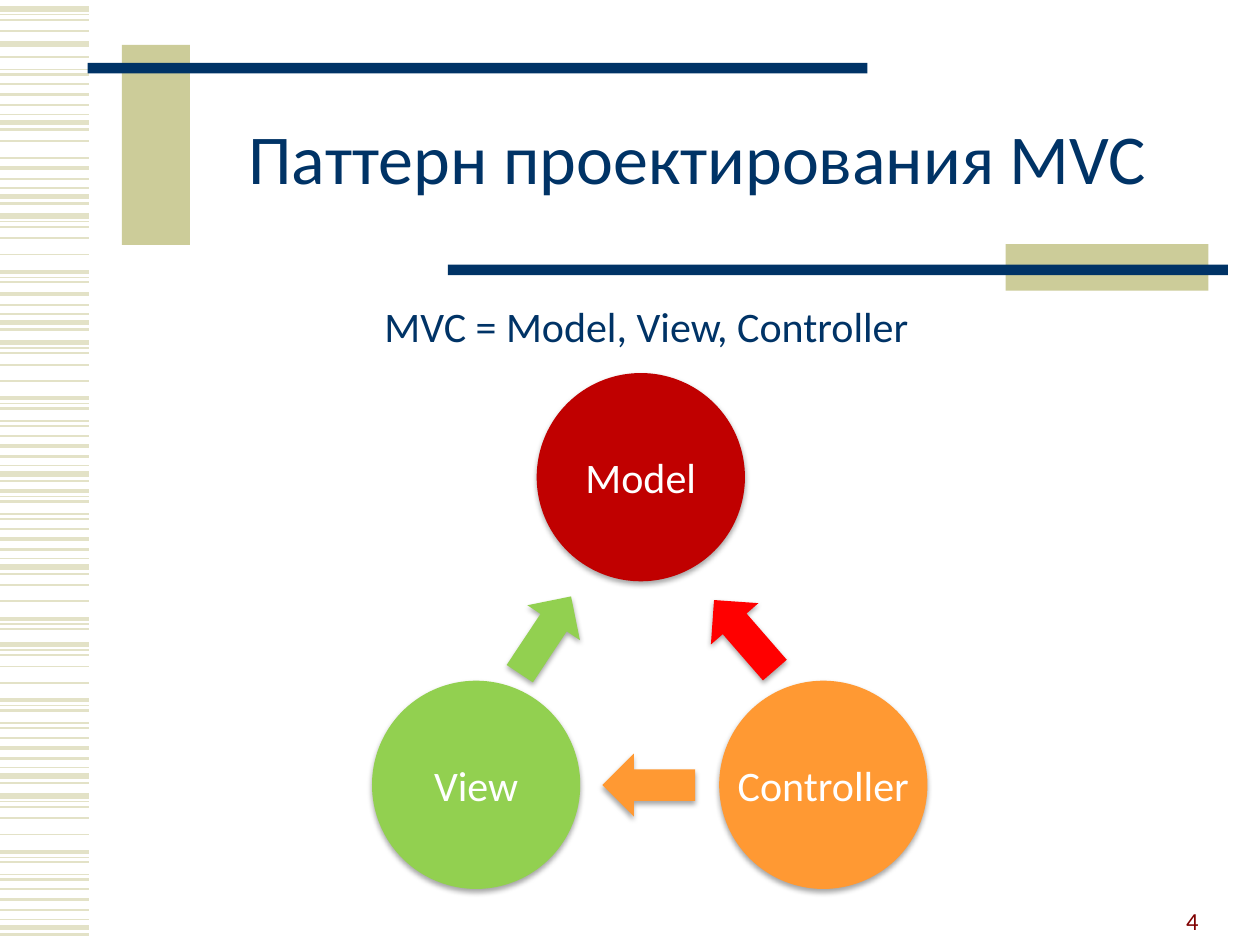
import pptx
import pptx.dml.color
import pptx.enum.shapes
import pptx.enum.text
import pptx.oxml
import pptx.oxml.ns
import pptx.util

Pt = pptx.util.Pt
KIND = pptx.enum.shapes.MSO_SHAPE
ALIGN = pptx.enum.text.PP_ALIGN
ANCHOR = pptx.enum.text.MSO_ANCHOR

COLORS = {
    "stripe": "E3E2C7", "sand": "CCCC99", "navy": "003366", "maroon": "800000",
    "white": "FFFFFF", "model": "C00000", "view": "92D050",
    "control": "FF9933", "red": "FF0000",
}

# Stripes of one band, bottom to top: offset from the band's base, line width
BAND = [
    (4, 1.5), (0, 3), (-4.7, 0.75), (-10, 1.5), (-16, 2.25), (-21.8, 1),
    (-27.5, 1.5), (-30.3, 0.75), (-37.4, 1.5), (-40.2, 0.75), (-43.2, 2.25),
    (-53.2, 1), (-62.5, 1), (-69, 1), (-72, 0.75), (-75.2, 3),
]
# Base of each band, and the first and last stripe (exclusive) it shows
BANDS = [
    (530, 0, 16), (443.4, 0, 16), (396.8, 8, 13), (324, 0, 11),
    (270.9, 0, 16), (184.2, 0, 5), (198.6, 8, 16), (112.2, 0, 6),
    (143.1, 12, 13), (70, 0, 9), (25.2, 1, 2), (80.4, 12, 16),
]
BARS = [
    ("sand", 69.7, 25.7, 38.9, 114.3), ("navy", 50, 36, 445.7, 6),
    ("sand", 574.6, 139.5, 116, 26.6), ("navy", 256, 151.3, 445.7, 6),
]
ARROWS = [
    ("control", 344.2, 430.6, 180), ("view", 285.2, 344.9, 303.6),
    ("red", 398.9, 344.9, 229),
]
DISKS = [
    ("View", "view", 212.6, 389), ("Controller", "control", 411, 389),
    ("Model", "model", 306.7, 213.2),
]


def rgb(name):
    return pptx.dml.color.RGBColor.from_string(COLORS[name])


def write(shape, text, size, color, align, frame):
    """Put one paragraph in a shape; frame holds text frame settings."""
    body = shape.text_frame
    for key, value in frame.items():
        setattr(body, key, value)
    para = body.paragraphs[0]
    para.text = text
    para.alignment = align
    font = para.runs[0].font
    for key, value in {"name": "Calibri", "size": Pt(size)}.items():
        setattr(font, key, value)
    font.color.rgb = rgb(color)
    return para


def stripe(slide, y, width):
    line = slide.shapes.add_connector(
        pptx.enum.shapes.MSO_CONNECTOR.STRAIGHT, 0, Pt(y), Pt(51), Pt(y))
    line.line.color.rgb = rgb("stripe")
    line.line.width = Pt(width)
    line._element.spPr.append(
        pptx.oxml.parse_xml(f"<a:effectLst {pptx.oxml.ns.nsdecls('a')}/>"))


def solid(slide, kind, color, *box):
    shape = slide.shapes.add_shape(kind, *map(Pt, box))
    shape.fill.solid()
    shape.fill.fore_color.rgb = rgb(color)
    shape.line.fill.background()
    shape.shadow.inherit = False
    return shape


def shade(shape):
    """Give a shape a soft shadow straight below it."""
    effects = shape._element.spPr.find(pptx.oxml.ns.qn("a:effectLst"))
    effects.append(pptx.oxml.parse_xml(
        f'<a:outerShdw {pptx.oxml.ns.nsdecls("a")} blurRad="{Pt(3.1)}" '
        f'dist="{Pt(1.8)}" dir="5400000" rotWithShape="0">'
        '<a:srgbClr val="000000"><a:alpha val="35000"/></a:srgbClr>'
        '</a:outerShdw>'))


def title(slide, text):
    shape = slide.shapes.title
    place = {"left": 108, "top": 48, "width": 581, "height": 90}
    for key, value in place.items():
        setattr(shape, key, Pt(value))
    para = write(shape, text, 40, "navy", ALIGN.CENTER,
                 {"vertical_anchor": ANCHOR.MIDDLE, "word_wrap": True})
    para.line_spacing = 0.85


def label(slide, text, size, color, align, box, frame):
    shape = slide.shapes.add_textbox(*map(Pt, box))
    write(shape, text, size, color, align, frame)


def arrow(slide, color, x, y, turn):
    shape = solid(slide, KIND.RIGHT_ARROW, color, x, y, 53, 36)
    shape.rotation = turn
    shade(shape)


def disk(slide, text, color, x, y):
    shape = solid(slide, KIND.OVAL, color, x, y, 119, 119)
    shade(shape)
    write(shape, text, 24, "white", ALIGN.CENTER,
          {"vertical_anchor": ANCHOR.MIDDLE, "word_wrap": False})


def main():
    deck = pptx.Presentation()
    deck.slide_width, deck.slide_height = Pt(720), Pt(540)
    slide = deck.slides.add_slide(deck.slide_layouts[5])

    for base, first, last in BANDS:
        for shift, width in BAND[first:last]:
            stripe(slide, base + shift, width)
    for bar in BARS:
        solid(slide, KIND.RECTANGLE, *bar)

    title(slide, "Паттерн проектирования MVC")
    label(slide, "4", 14, "maroon", ALIGN.RIGHT, (519, 502, 173, 36),
          {"vertical_anchor": ANCHOR.BOTTOM, "word_wrap": True})
    label(slide, "MVC = Model, View, Controller", 24, "navy", ALIGN.LEFT,
          (212.6, 168, 332, 36),
          {"word_wrap": False,
           "auto_size": pptx.enum.text.MSO_AUTO_SIZE.SHAPE_TO_FIT_TEXT})

    for item in ARROWS:
        arrow(slide, *item)
    for item in DISKS:
        disk(slide, *item)
    deck.save("out.pptx")


if __name__ == "__main__":
    main()
